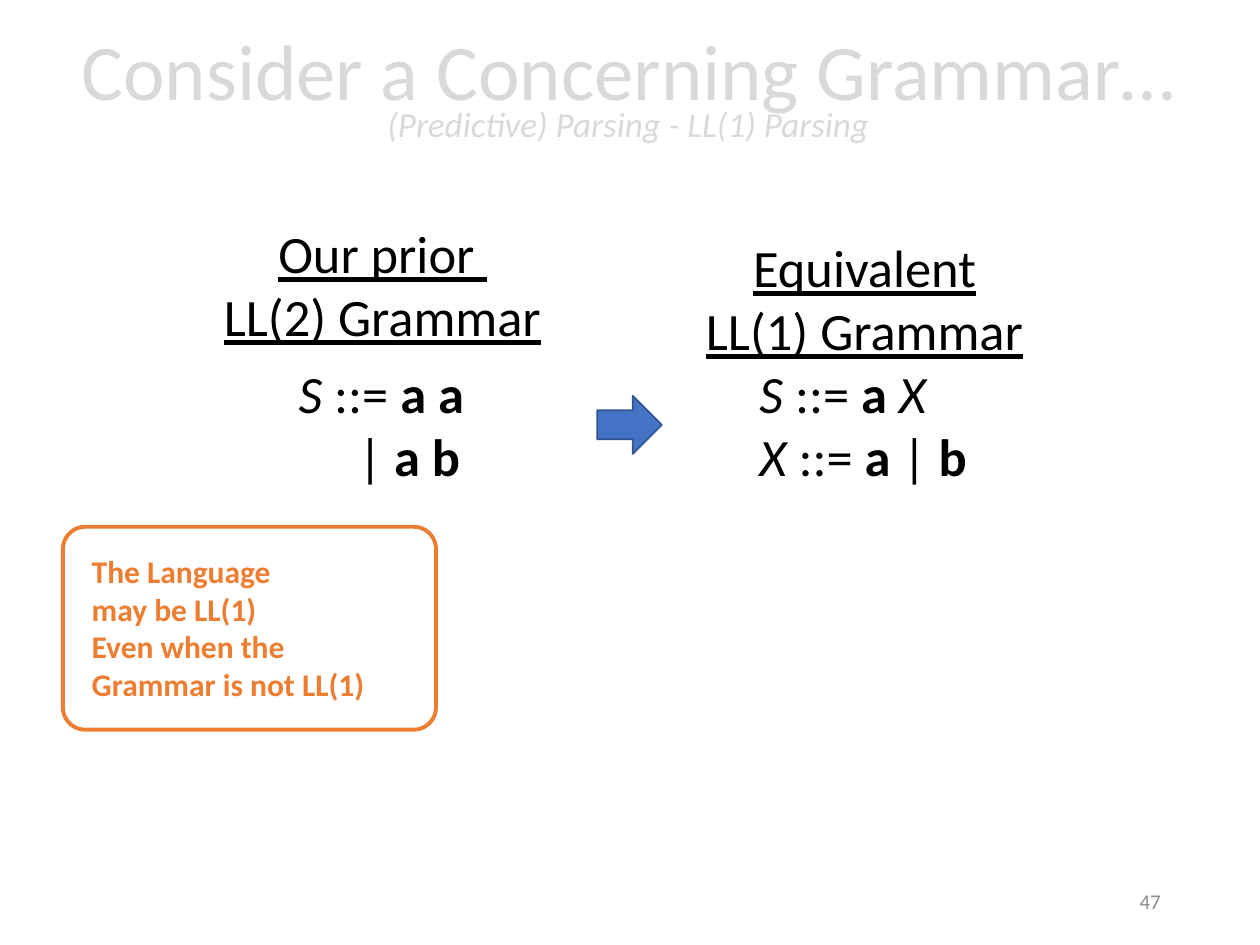
from pptx import Presentation
from pptx.dml.color import RGBColor
from pptx.enum.shapes import MSO_SHAPE
from pptx.enum.text import MSO_ANCHOR, PP_ALIGN
from pptx.util import Cm, Pt

ROUNDED, ARROW = MSO_SHAPE.ROUNDED_RECTANGLE, MSO_SHAPE.RIGHT_ARROW
LEFT, CENTER, RIGHT = PP_ALIGN.LEFT, PP_ALIGN.CENTER, PP_ALIGN.RIGHT
TOP, MIDDLE = MSO_ANCHOR.TOP, MSO_ANCHOR.MIDDLE

BLACK = RGBColor(0x00, 0x00, 0x00)
WHITE = RGBColor(0xFF, 0xFF, 0xFF)
PALE = RGBColor(0xD9, 0xD9, 0xD9)
GRAY = RGBColor(0x8C, 0x8C, 0x8C)
ORANGE = RGBColor(0xED, 0x7D, 0x31)
BLUE = RGBColor(0x44, 0x72, 0xC4)
DARK_BLUE = RGBColor(0x32, 0x54, 0x91)


class SlideWriter:
    font = "Calibri"
    body_size = 30

    def __init__(self, page):
        self.page = page

    def span(self, para, text, size, color, style=""):
        """Add one run; style holds any of the letters b, i and u."""
        run = para.add_run()
        run.text = text
        font = run.font
        font.name, font.size = self.font, Pt(size)
        font.color.rgb = color
        font.bold, font.italic, font.underline = (key in style for key in "biu")

    def text(self, place, lines, size=body_size, color=BLACK, align=LEFT,
             anchor=TOP, wrap=False, indents=()):
        """Write lines, each a list of (text, style) pairs."""
        box = self.page.shapes.add_textbox(*map(Cm, place))
        frame = box.text_frame
        frame.word_wrap, frame.vertical_anchor = wrap, anchor
        for index, line in enumerate(lines):
            para = frame.add_paragraph() if index else frame.paragraphs[0]
            para.alignment = align
            if index < len(indents):
                para._p.get_or_add_pPr().set("marL", str(Cm(indents[index])))
            for words, style in line:
                self.span(para, words, size, color, style)

    def title(self, place, heading, subtitle):
        box = self.page.shapes.title
        box.left, box.top, box.width, box.height = map(Cm, place)
        box.text_frame.vertical_anchor = MIDDLE
        box.text_frame.word_wrap = True
        para = box.text_frame.paragraphs[0]
        para.alignment, para.line_spacing = CENTER, 0.7
        self.span(para, heading, 45, PALE)
        para.add_line_break()
        self.span(para, subtitle, 20, PALE, "i")

    def shape(self, kind, place, fill, line, weight):
        shape = self.page.shapes.add_shape(kind, *map(Cm, place))
        shape.shadow.inherit = False
        shape.fill.solid()
        shape.fill.fore_color.rgb = fill
        shape.line.color.rgb = line
        shape.line.width = Pt(weight)
        return shape

    def heading(self, left, top, lines):
        self.text((left, top, 6.98, 2.82), [[(line, "u")] for line in lines],
                  align=CENTER)


def main():
    deck = Presentation()
    deck.slide_width, deck.slide_height = Cm(25.4), Cm(19.05)
    # Title Only keeps a real title; its other placeholders are not inherited
    page = deck.slides.add_slide(deck.slide_layouts[5])
    writer = SlideWriter(page)

    # Title
    writer.title((0.3, 0.08, 24.74, 3.68), "Consider a Concerning Grammar…",
                 "(Predictive) Parsing - LL(1) Parsing")

    # Grammar headings
    writer.heading(4.22, 4.34, ["Our prior ", "LL(2) Grammar"])
    writer.heading(13.94, 4.62, ["Equivalent", "LL(1) Grammar"])

    # Grammar rules
    rules_top, rules_height = 7.16, 2.82
    writer.text((5.77, rules_top, 3.89, rules_height), [
        [("S", "i"), (" ::= ", ""), ("a a", "b")],
        [("| ", ""), ("a b", "b")],
    ], indents=(0, 1.2))
    writer.text((15.06, rules_top, 4.72, rules_height), [
        [("S", "i"), (" ::= ", ""), ("a ", "b"), ("X", "i")],
        [("X ", "i"), ("::= ", ""), ("a ", "b"), ("| ", ""), ("b", "b")],
    ])

    # Arrow between the grammars
    writer.shape(ARROW, (12.04, 7.98, 1.3, 1.17), BLUE, DARK_BLUE, 1)

    # Callout
    callout = writer.shape(ROUNDED, (1.27, 10.62, 7.52, 4.09), WHITE, ORANGE, 2.25)
    callout.adjustments[0] = 0.11
    remark = ["The Language", "may be LL(1)", "Even when the",
              "Grammar is not LL(1)"]
    writer.text((1.6, 11, 7.21, 3.33), [[(line, "b")] for line in remark],
                size=18, color=ORANGE)

    # Slide number
    writer.text((17.93, 17.65, 5.72, 1.02), [[("47", "")]], size=12, color=GRAY,
                align=RIGHT, anchor=MIDDLE, wrap=True)

    deck.save("out.pptx")


if __name__ == "__main__":
    main()
